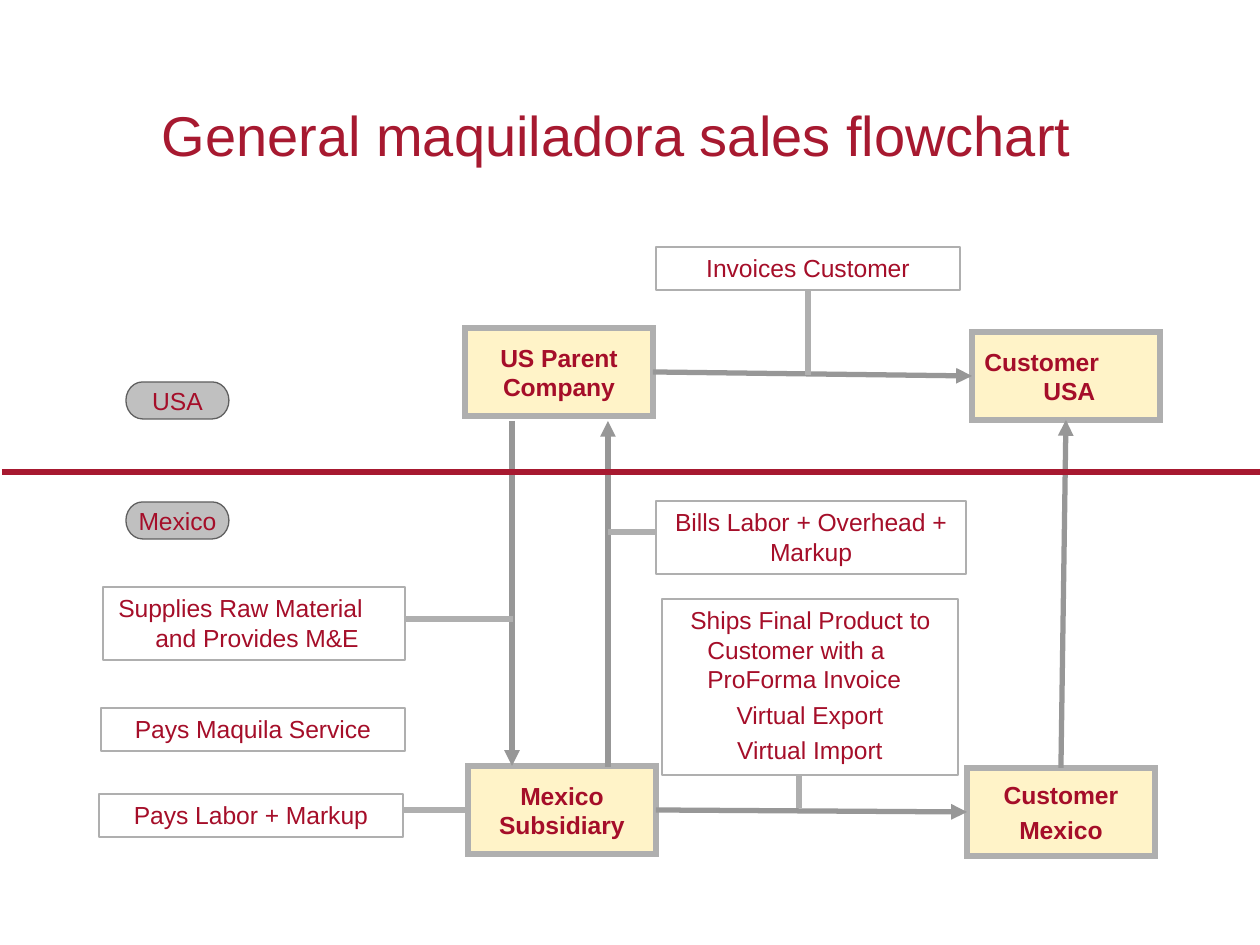
import dataclasses
import typing
import pptx
import pptx.dml.color
import pptx.enum.dml
import pptx.enum.shapes
import pptx.enum.text
import pptx.oxml.ns
import pptx.util
from lxml import etree

PX = 914400 // 126
RED, TEXT, GREY, DARK = "A71930", "A50E29", "AFAFAF", "979797"
KIND = pptx.enum.shapes.MSO_SHAPE
ALIGN = pptx.enum.text.PP_ALIGN
ANCHOR = pptx.enum.text.MSO_ANCHOR
Join = typing.Optional[tuple[str, int]]
qn = pptx.oxml.ns.qn


@dataclasses.dataclass
class Style:
    kind: int
    fill: typing.Optional[str]
    line: str
    weight: float
    bold: bool = False
    middle: bool = True
    wrap: bool = True


@dataclasses.dataclass
class Box:
    key: str
    style: Style
    left: int
    top: int
    width: int
    height: int
    lines: list[str]
    hang: typing.Optional[tuple[int, int]] = None  # first line, later lines
    size: float = 14.1


@dataclasses.dataclass
class Link:
    start: tuple[int, int]
    end: tuple[int, int]
    color: str = GREY
    arrow: bool = False
    begin: Join = None
    finish: Join = None


TAG = Style(KIND.FLOWCHART_TERMINATOR, "C0C0C0", "5F5F5F", 0.75, wrap=False)
NOTE = Style(KIND.RECTANGLE, None, GREY, 1.5, middle=False)
FIRM = Style(KIND.FLOWCHART_PROCESS, "FFF3C8", GREY, 3, bold=True)

BOXES = [
    Box("usa", TAG, 126, 382, 103, 37, ["USA"]),
    Box("mexico", TAG, 126, 502, 103, 37, ["Mexico"]),
    Box("supply", NOTE, 103, 587, 302, 73,
        ["Supplies Raw Material and Provides M&E"], (3, 40)),
    Box("service", NOTE, 101, 708, 304, 43, ["Pays Maquila Service"]),
    Box("labor", NOTE, 99, 794, 304, 43, ["Pays Labor + Markup"]),
    Box("parent", FIRM, 465, 328, 188, 88, ["US Parent Company"]),
    Box("plant", FIRM, 468, 766, 188, 88, ["Mexico Subsidiary"]),
    Box("invoice", NOTE, 656, 247, 304, 43, ["Invoices Customer"]),
    Box("buyer usa", FIRM, 972, 332, 188, 88, ["Customer USA"], (0, 59)),
    Box("buyer mexico", FIRM, 967, 768, 188, 88, ["Customer", "Mexico"]),
    Box("ship", NOTE, 662, 599, 296, 176,
        ["Ships Final Product to Customer with a ProForma Invoice",
         "Virtual Export", "Virtual Import"], (16, 33), 14),
    Box("bill", NOTE, 656, 501, 310, 73, ["Bills Labor + Overhead + Markup"]),
]

LINKS = [
    Link((512, 421), (512, 766), DARK, True),
    Link((608, 767), (608, 421), DARK, True),
    Link((404, 619), (513, 619)),
    Link((404, 810), (468, 810), finish=("plant", 1)),
    Link((608, 532), (656, 532)),
    Link((656, 810), (967, 812), DARK, True, ("plant", 3), ("buyer mexico", 1)),
    Link((799, 775), (799, 808)),
    Link((1061, 768), (1066, 420), DARK, True,
         ("buyer mexico", 0), ("buyer usa", 2)),
    Link((653, 372), (972, 376), DARK, True, ("parent", 3), ("buyer usa", 1)),
    Link((808, 290), (808, 375), begin=("invoice", 2)),
    Link((2, 472), (1260, 472), RED),
]


def paint(fmt: typing.Any, color: str) -> None:
    """Give a fill or a font one solid colour."""
    if hasattr(fmt, "solid"):
        fmt.solid()
        fmt = fmt.fore_color
    else:
        fmt = fmt.color
    fmt.rgb = pptx.dml.color.RGBColor.from_string(color)


def set_font(par: typing.Any, size: float, color: str, bold: bool) -> None:
    par.font.name = "Arial"
    par.font.size = pptx.util.Pt(size)
    par.font.bold = bold
    paint(par.font, color)


def draw_box(slide: typing.Any, box: Box) -> typing.Any:
    style = box.style
    shape = slide.shapes.add_shape(
        style.kind, box.left * PX, box.top * PX, box.width * PX, box.height * PX)
    shape.shadow.inherit = False
    if style.fill:
        paint(shape.fill, style.fill)
    else:
        shape.fill.background()
    paint(shape.line.fill, style.line)
    shape.line.width = pptx.util.Pt(style.weight)
    if style is FIRM:  # square corners
        etree.SubElement(shape.line._get_or_add_ln(), qn("a:miter"), lim="800000")
    frame = shape.text_frame
    frame.word_wrap = style.wrap
    frame.vertical_anchor = ANCHOR.MIDDLE if style.middle else ANCHOR.TOP
    for i, line in enumerate(box.lines):
        par = frame.paragraphs[0] if i == 0 else frame.add_paragraph()
        par.text = line
        par.alignment = ALIGN.CENTER
        if i > 0:
            par.space_before = pptx.util.Pt(3.5)
        elif box.hang:
            first, rest = box.hang
            par.alignment = ALIGN.LEFT
            props = par._p.get_or_add_pPr()
            props.set("marL", str(rest * PX))
            props.set("indent", str((first - rest) * PX))
        set_font(par, box.size, TEXT, style.bold)
    return shape


def draw_link(slide: typing.Any, link: Link, made: dict[str, typing.Any]) -> None:
    ends = [n * PX for n in link.start + link.end]
    line = slide.shapes.add_connector(
        pptx.enum.shapes.MSO_CONNECTOR.STRAIGHT, *ends)
    if link.begin:
        line.begin_connect(made[link.begin[0]], link.begin[1])
    if link.finish:
        line.end_connect(made[link.finish[0]], link.finish[1])
    paint(line.line.fill, link.color)
    line.line.width = pptx.util.Pt(3)
    if link.arrow:
        etree.SubElement(line.line._get_or_add_ln(), qn("a:tailEnd"),
                         type="triangle")
    etree.SubElement(line._element.spPr, qn("a:effectLst"))


def draw_title(slide: typing.Any, text: str) -> None:
    title = slide.shapes.title
    title.left, title.top = 149 * PX, 94 * PX
    title.width, title.height = 1041 * PX, 52 * PX
    frame = title.text_frame
    frame.text = text
    frame.auto_size = pptx.enum.text.MSO_AUTO_SIZE.NONE
    frame.vertical_anchor = ANCHOR.TOP
    # The text is taller than the box, so the margins stay small
    frame.margin_top = 6 * PX
    frame.margin_bottom = 0
    par = frame.paragraphs[0]
    par.alignment = ALIGN.LEFT
    set_font(par, 32, RED, False)


def main() -> None:
    deck = pptx.Presentation()
    deck.slide_width = pptx.util.Inches(10)
    deck.slide_height = pptx.util.Inches(7.5)
    slide = deck.slides.add_slide(deck.slide_layouts[5])
    draw_title(slide, "General maquiladora sales flowchart")
    # Boxes first, so the links can join them
    made = {box.key: draw_box(slide, box) for box in BOXES}
    for link in LINKS:
        draw_link(slide, link, made)
    deck.save("out.pptx")


if __name__ == "__main__":
    main()
